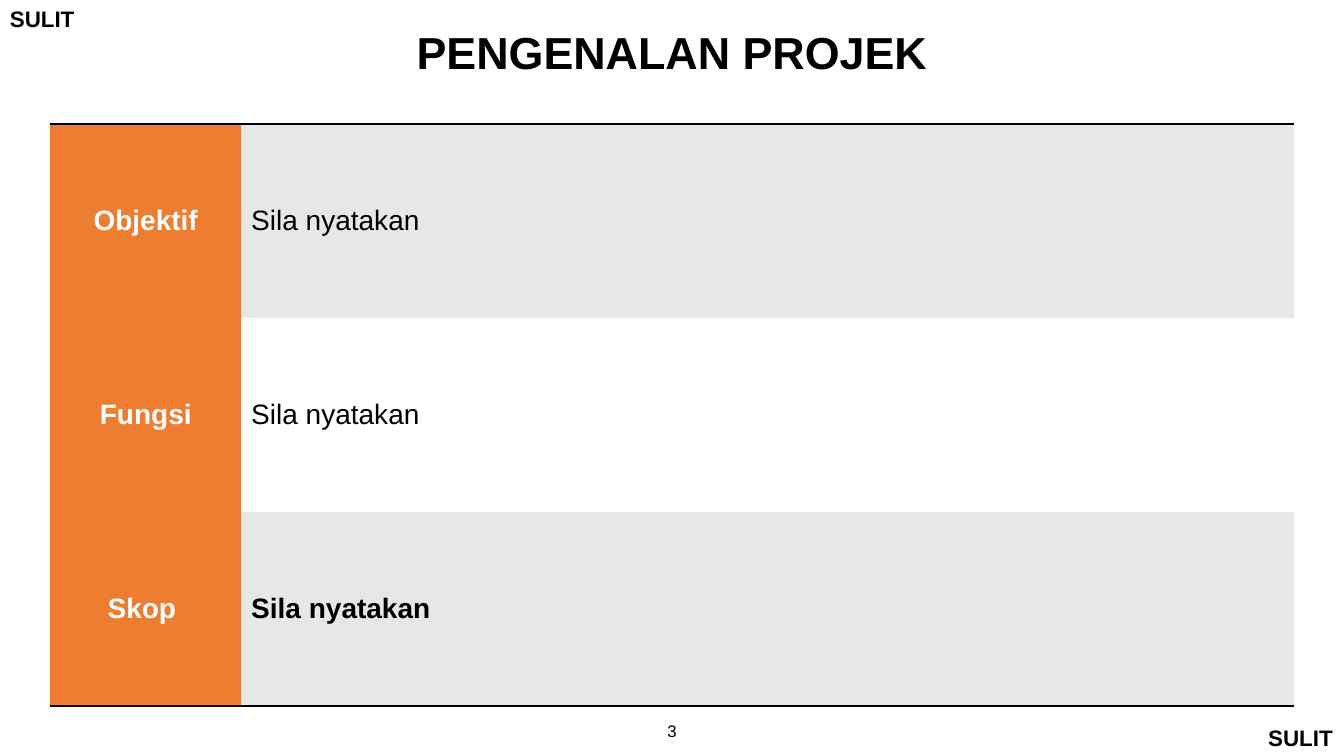
from lxml.etree import SubElement
from pptx import Presentation
from pptx.dml.color import RGBColor
from pptx.enum.text import MSO_ANCHOR, MSO_AUTO_SIZE, PP_ALIGN
from pptx.oxml.ns import qn
from pptx.util import Pt

FONT = "Arial"
BLACK, WHITE, ORANGE, GREY = "000000", "FFFFFF", "ED7D31", "E7E7E7"
ROWS = [
    ("Objektif", "Sila nyatakan", False),
    ("Fungsi", "Sila nyatakan", False),
    ("Skop ", "Sila nyatakan", True),
]


def rgb(value):
    """Turn a hex string into a colour."""
    return RGBColor.from_string(value)


def write(tf, text, size, bold, color=BLACK, align=PP_ALIGN.LEFT):
    """Put one styled paragraph into a text frame."""
    p = tf.paragraphs[0]
    p.text = text
    p.alignment = align
    p.font.name = FONT
    p.font.size = Pt(size)
    p.font.bold = bold
    p.font.color.rgb = rgb(color)


def add_text(s, box, text, size, bold=True, align=PP_ALIGN.LEFT, wrap=False):
    """Add a text box at left, top, width, height in points."""
    tf = s.shapes.add_textbox(*map(Pt, box)).text_frame
    tf.word_wrap = wrap
    tf.auto_size = MSO_AUTO_SIZE.NONE if wrap else MSO_AUTO_SIZE.SHAPE_TO_FIT_TEXT
    write(tf, text, size, bold, align=align)
    return tf


def set_borders(cell, ruled):
    """Rule the named sides of a cell in black and clear the others."""
    tcPr = cell._tc.get_or_add_tcPr()
    for side in "LRTB":
        ln = SubElement(tcPr, qn(f"a:ln{side}"), w=str(Pt(2)))
        if side in ruled:
            fill = SubElement(ln, qn("a:solidFill"))
            SubElement(fill, qn("a:srgbClr"), val=BLACK)
        else:
            SubElement(ln, qn("a:noFill"))


def style_cell(cell, text, bold, fill, ruled, color=BLACK, align=PP_ALIGN.LEFT):
    """Fill, rule and write one table cell."""
    set_borders(cell, ruled)
    cell.fill.solid()
    cell.fill.fore_color.rgb = rgb(fill)
    cell.vertical_anchor = MSO_ANCHOR.MIDDLE
    write(cell.text_frame, text, 20, bold, color, align)


def add_intro_table(s):
    """Add the table of project headings and details."""
    box = map(Pt, (36, 88.5, 888.5, 416))
    table = s.shapes.add_table(len(ROWS), 2, *box).table
    table.first_row = table.horz_banding = False
    for column, width in zip(table.columns, (136.25, 752.25)):
        column.width = Pt(width)
    for i, (heading, detail, bold) in enumerate(ROWS):
        ruled = {0: "T", len(ROWS) - 1: "B"}.get(i, "")
        band = WHITE if i % 2 else GREY
        style_cell(table.cell(i, 0), heading, True, ORANGE, ruled, WHITE, PP_ALIGN.CENTER)
        style_cell(table.cell(i, 1), detail, bold, band, ruled)


def main():
    """Build the slide and save it."""
    prs = Presentation()
    prs.slide_width, prs.slide_height = Pt(960), Pt(540)
    s = prs.slides.add_slide(prs.slide_layouts[6])
    for left, top in ((0, 0), (898.8, 513.4)):
        add_text(s, (left, top, 61.2, 26.6), "SULIT", 16)
    add_intro_table(s)
    tf = add_text(s, (290.6, 15.1, 378.8, 44), "PENGENALAN PROJEK", 32, align=PP_ALIGN.CENTER)
    tf.margin_left = tf.margin_right = Pt(5)
    tf.margin_top = tf.margin_bottom = Pt(2.9)
    add_text(s, (461, 511, 38, 29), "3", 12, False, PP_ALIGN.CENTER, True)
    prs.save("out.pptx")


if __name__ == "__main__":
    main()
